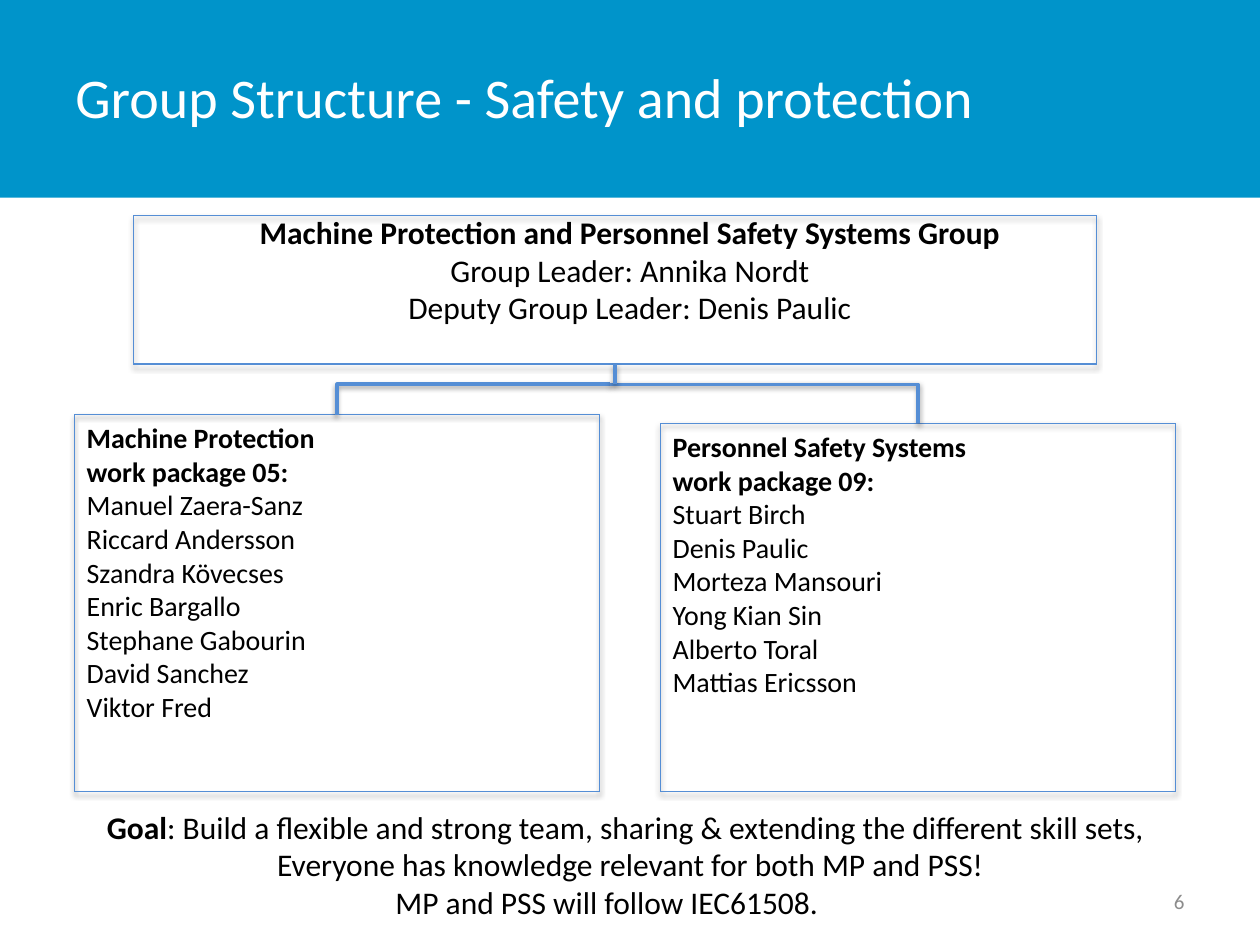
import pptx
import pptx.util
import pptx.dml.color
import pptx.enum.shapes
import pptx.enum.text
from lxml import etree
from pptx.oxml.ns import qn

RGB = pptx.dml.color.RGBColor
SHAPE = pptx.enum.shapes.MSO_SHAPE
LINK = pptx.enum.shapes.MSO_CONNECTOR
ALIGN = pptx.enum.text.PP_ALIGN
ANCHOR = pptx.enum.text.MSO_ANCHOR
Inches, Pt = pptx.util.Inches, pptx.util.Pt

BANNER = RGB(0x00, 0x94, 0xCA)
BORDER = RGB(0x55, 0x8E, 0xD5)
FRAME = RGB(0x3D, 0x7C, 0xC7)
GREY = RGB(0x8C, 0x8C, 0x8C)
WHITE = RGB(0xFF, 0xFF, 0xFF)
BLACK = RGB(0, 0, 0)

# Content: a line is a list of (text, bold) runs
TITLE = "Group Structure - Safety and protection"
NUMBER = "6"
LEADERS = [
    [("Machine Protection and Personnel Safety Systems Group", True)],
    [("Group Leader: Annika Nordt", False)],
    [("Deputy Group Leader: Denis Paulic", False)],
]
TEAMS = [
    # left, top, width, heading, members
    (0.59, 3.29, 4.17, "Machine Protection\nwork package 05:",
     ["Manuel Zaera-Sanz", "Riccard Andersson", "Szandra Kövecses",
      "Enric Bargallo", "Stephane Gabourin", "David Sanchez", "Viktor Fred"]),
    (5.24, 3.36, 4.09, "Personnel Safety Systems\nwork package 09:",
     ["Stuart Birch", "Denis Paulic", "Morteza Mansouri", "Yong Kian Sin",
      "Alberto Toral", "Mattias Ericsson"]),
]
GOAL = [
    [("Goal", True),
     (": Build a flexible and strong team, sharing & extending"
      " the different skill sets,", False)],
    [("Everyone has knowledge relevant for both MP and PSS!", False)],
    [("MP and PSS will follow IEC61508.", False)],
]
GOAL_INDENTS = [0, 1.35, 2.29]
LEADER_BOX = (1.06, 1.71, 7.64, 1.18)
TEAM_BOTTOM = 6.28
BUS_X, BUS_Y = 4.84, 3.05
STEM_X = 4.88

prs = pptx.Presentation()
prs.slide_width, prs.slide_height = Inches(10), Inches(7.5)
s = prs.slides.add_slide(prs.slide_layouts[6])


def add_shadow(shape, alpha, dist):
    spPr = shape._element.spPr
    for old in spPr.findall(qn("a:effectLst")):
        spPr.remove(old)
    effects = etree.SubElement(spPr, qn("a:effectLst"))
    outer = etree.SubElement(effects, qn("a:outerShdw"), blurRad=str(Pt(3.1)),
                             dist=str(Pt(dist)), dir="5400000", rotWithShape="0")
    color = etree.SubElement(outer, qn("a:srgbClr"), val="000000")
    etree.SubElement(color, qn("a:alpha"), val=str(alpha * 1000))


def add_text(box, lines, size, color=BLACK, align=ALIGN.LEFT,
             anchor=ANCHOR.TOP, wrap=True, indents=None):
    tf = s.shapes.add_textbox(*map(Inches, box)).text_frame
    tf.word_wrap, tf.vertical_anchor = wrap, anchor
    for i, runs in enumerate(lines):
        p = tf.paragraphs[0] if i == 0 else tf.add_paragraph()
        p.alignment = align
        if indents:
            p._p.get_or_add_pPr().set("marL", str(Inches(indents[i])))
        p.font.size, p.font.name = Pt(size), "Calibri"
        p.font.color.rgb = color
        if len(runs) == 1:
            p.text, p.font.bold = runs[0]
        else:
            for text, bold in runs:
                r = p.add_run()
                r.text, r.font.bold = text, bold


def add_frame(box):
    sp = s.shapes.add_shape(SHAPE.FRAME, *map(Inches, box))
    sp.adjustments[0] = 0
    sp.fill.solid()
    sp.fill.fore_color.rgb = FRAME
    sp.line.color.rgb, sp.line.width = BORDER, Pt(0.75)
    add_shadow(sp, 35, 1.8)


def add_link(kind, *ends):
    line = s.shapes.add_connector(kind, *map(Inches, ends))
    line.line.color.rgb, line.line.width = BORDER, Pt(2)
    if kind == LINK.ELBOW:  # a single corner
        line._element.spPr.find(qn("a:prstGeom")).set("prst", "bentConnector2")
    add_shadow(line, 38, 1.6)


# Banner, title and slide number
banner = s.shapes.add_shape(SHAPE.RECTANGLE, 0, 0, prs.slide_width, Inches(1.57))
banner.shadow.inherit = False
banner.fill.solid()
banner.fill.fore_color.rgb = BANNER
banner.line.fill.background()
add_text((0.5, 0.14, 7.81, 1.25), [[(TITLE, False)]], 32, WHITE, anchor=ANCHOR.MIDDLE)
add_text((7.17, 6.95, 2.33, 0.4), [[(NUMBER, False)]], 12, GREY,
         ALIGN.RIGHT, ANCHOR.MIDDLE)

# Teams, each with its branch
for left, top, width, heading, members in TEAMS:
    box = (left, top, width, TEAM_BOTTOM - top)
    add_frame(box)
    add_text(box, [[(heading, True)]] + [[(m, False)] for m in members], 16)
    add_link(LINK.ELBOW, BUS_X, BUS_Y, left + width / 2, top)

# Group leaders and stem
add_frame(LEADER_BOX)
add_text((1.93, 1.64, 6.14, 1.01), LEADERS, 18, align=ALIGN.CENTER)
add_link(LINK.STRAIGHT, STEM_X, LEADER_BOX[1] + LEADER_BOX[3], STEM_X, BUS_Y)

# Goal
add_text((0.75, 6.36, 8.55, 1.01), GOAL, 18, wrap=False, indents=GOAL_INDENTS)

prs.save("out.pptx")
